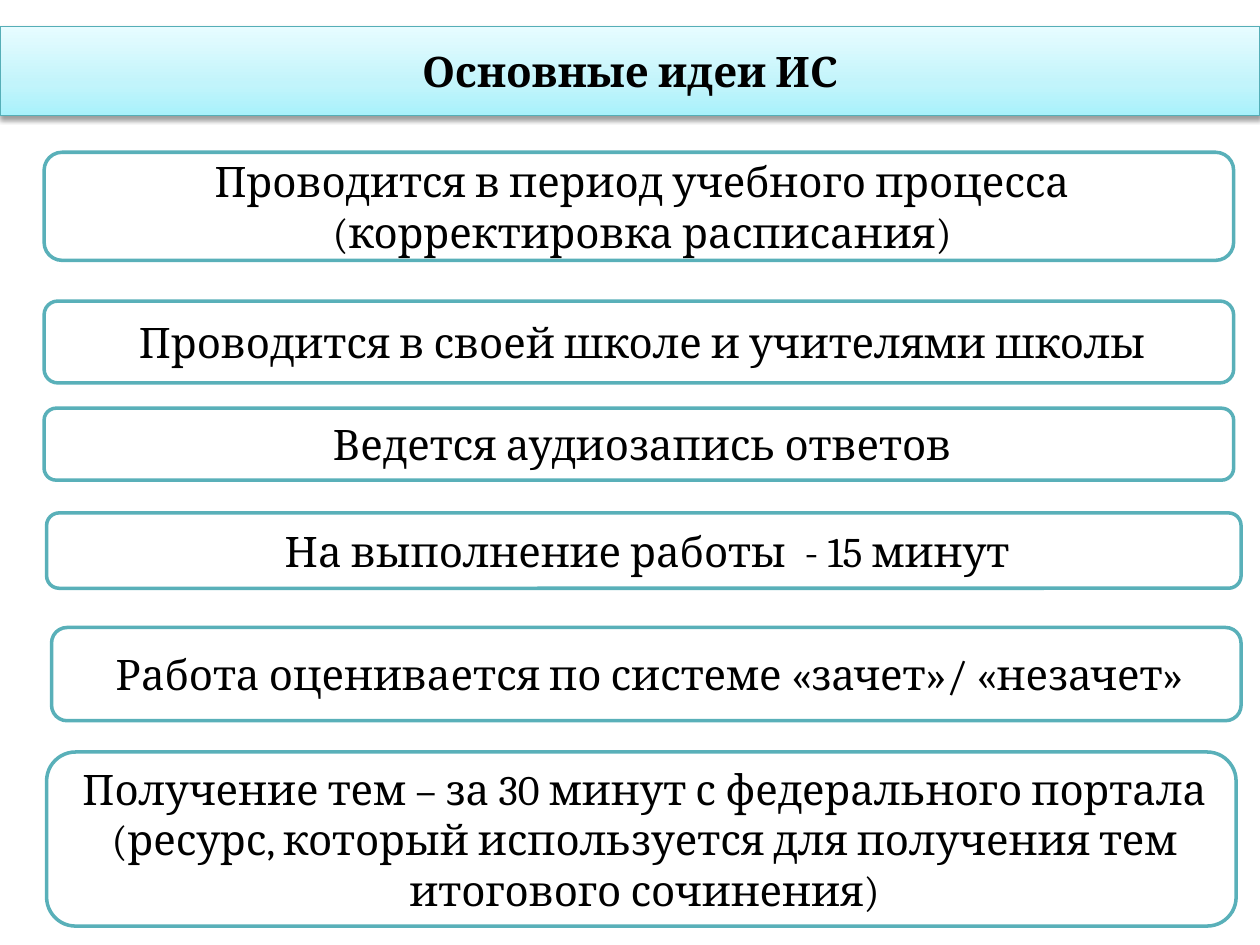
import copy

import lxml.etree
import pptx
import pptx.dml.color
import pptx.enum.shapes
import pptx.enum.text
import pptx.oxml.ns
import pptx.util
from pptx.util import Cm

FONT = "Cambria"
TITLE = "Основные идеи ИС"
TITLE_BOX = (0, 0.53, 25.4, 1.8)
GRADIENT = [(0, "A8F1FB"), (0.35, "C2F4FB"), (1, "E7FCFF")]
IDEAS = [
    (0.89, 3.07, 23.98, 2.18, ["Проводится в период учебного процесса (корректировка расписания)"]),
    (0.89, 6.07, 23.98, 1.65, ["Проводится в своей школе и учителями школы"]),
    (0.89, 8.23, 23.98, 1.45, ["Ведется аудиозапись ответов"]),
    (0.94, 10.34, 24.08, 1.52, ["На выполнение работы  - 15 минут"]),
    (1.04, 12.65, 23.98, 1.88, ["Работа оценивается по системе «зачет»/ «незачет»"]),
    (0.94, 15.16, 23.98, 3.51, [
        "Получение тем – за 30 минут с федерального портала",
        "(ресурс, который используется для получения тем итогового сочинения)",
    ]),
]


def rgb(value):
    return pptx.dml.color.RGBColor.from_string(value)


def add_xml(parent, tag, **attrs):
    return lxml.etree.SubElement(parent, pptx.oxml.ns.qn(tag), attrs)


def set_line(sp, color, width):
    sp.line.color.rgb = rgb(color)
    sp.line.width = pptx.util.Pt(width)


def write(sp, lines, bold=False, indent=0):
    tf = sp.text_frame
    tf.word_wrap = True
    tf.auto_size = pptx.enum.text.MSO_AUTO_SIZE.NONE
    tf.vertical_anchor = pptx.enum.text.MSO_ANCHOR.MIDDLE
    for i, line in enumerate(lines):
        p = tf.add_paragraph() if i else tf.paragraphs[0]
        p.alignment = pptx.enum.text.PP_ALIGN.CENTER
        p._p.get_or_add_pPr().set("marL", str(Cm(indent)))
        r = p.add_run()
        r.text = line
        r.font.name = FONT
        r.font.size = pptx.util.Pt(24)
        r.font.bold = bold
        r.font.color.rgb = rgb("000000")


def format_title(sp):
    sp.left, sp.top, sp.width, sp.height = map(Cm, TITLE_BOX)
    spPr = sp._element.spPr
    geom = add_xml(spPr, "a:prstGeom", prst="roundRect")
    add_xml(geom, "a:avLst")
    sp.fill.gradient()
    sp.fill.gradient_angle = 90
    stops = spPr.find(".//" + pptx.oxml.ns.qn("a:gsLst"))
    stops.insert(1, copy.deepcopy(stops[0]))
    for stop, (position, color) in zip(sp.fill.gradient_stops, GRADIENT):
        stop.position = position
        stop.color.rgb = rgb(color)
    set_line(sp, "55AEB7", 0.75)
    effects = add_xml(spPr, "a:effectLst")
    shadow = add_xml(effects, "a:outerShdw", blurRad="40000", dist="20000",
                     dir="5400000", rotWithShape="0")
    color = add_xml(shadow, "a:srgbClr", val="000000")
    add_xml(color, "a:alpha", val="38000")
    write(sp, [TITLE], bold=True)


def add_idea(s, left, top, width, height, lines):
    sp = s.shapes.add_shape(pptx.enum.shapes.MSO_SHAPE.ROUNDED_RECTANGLE,
                            Cm(left), Cm(top), Cm(width), Cm(height))
    sp.shadow.inherit = False
    sp.fill.solid()
    sp.fill.fore_color.rgb = rgb("FFFFFF")
    set_line(sp, "59B0B9", 2)
    write(sp, lines, indent=0.13)


def main():
    """Build the slide with a title banner and a column of idea boxes."""
    prs = pptx.Presentation()
    prs.slide_width, prs.slide_height = Cm(25.4), Cm(19.05)
    s = prs.slides.add_slide(prs.slide_layouts[5])
    format_title(s.shapes.title)
    for idea in IDEAS:
        add_idea(s, *idea)
    prs.save("out.pptx")


if __name__ == "__main__":
    main()
